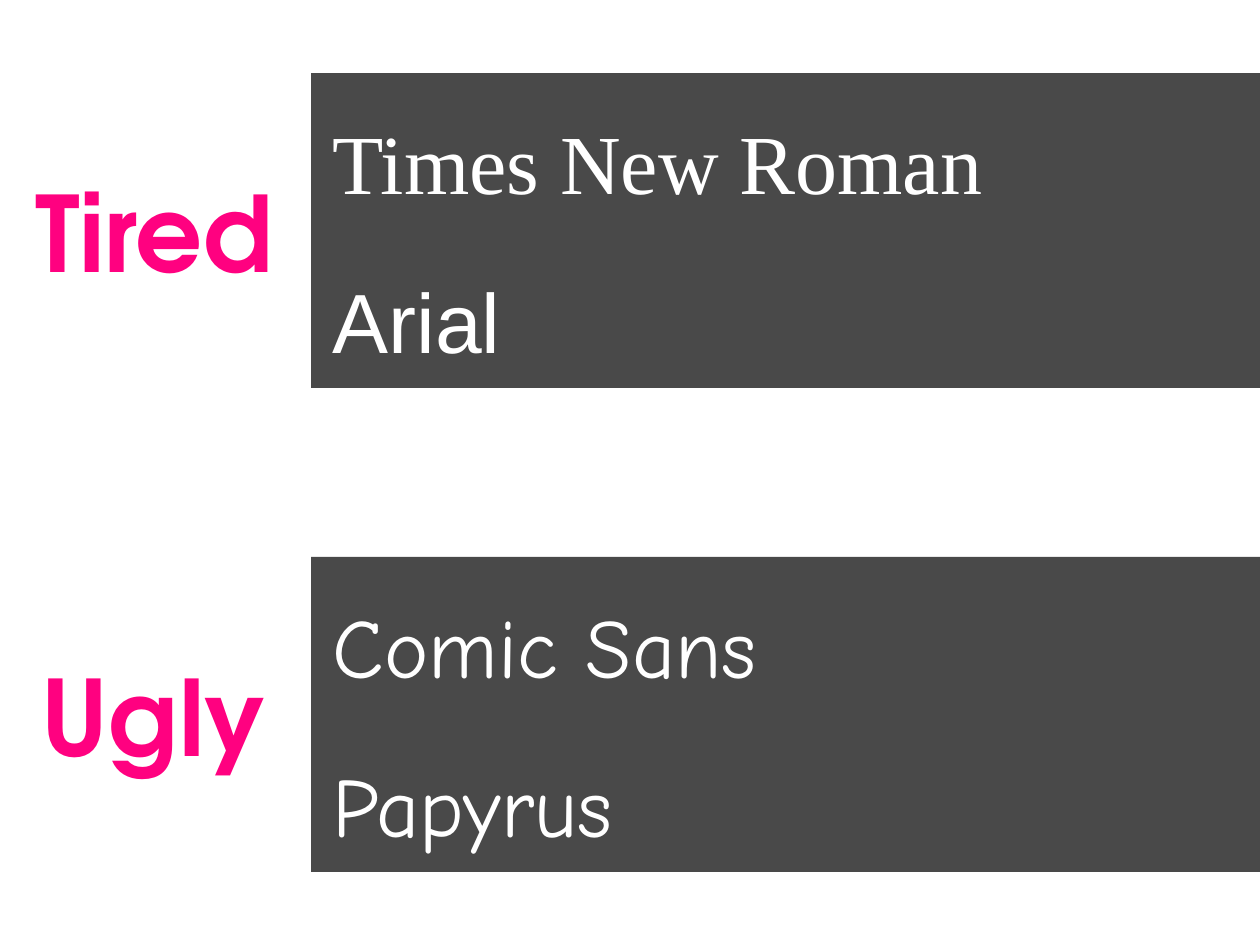
"""Build a slide listing tired and ugly typefaces in two dark bands."""

from dataclasses import dataclass

import pptx
import pptx.dml.color
import pptx.enum.shapes
import pptx.enum.text
import pptx.oxml
import pptx.util
from pptx.presentation import Presentation
from pptx.shapes.base import BaseShape
from pptx.slide import Slide

PINK = pptx.dml.color.RGBColor(0xFF, 0x01, 0x80)
CHARCOAL = pptx.dml.color.RGBColor(0x49, 0x49, 0x49)
WHITE = pptx.dml.color.RGBColor(0xFF, 0xFF, 0xFF)

SLIDE_WIDTH = 10
SLIDE_HEIGHT = 7.5
BAND_LEFT = 2.47
BAND_HEIGHT = SLIDE_HEIGHT / 3
FIRST_BAND_TOP = 0.58
BAND_PITCH = 3.84
LABEL_FONT = "TeX Gyre Adventor"
COMPARISON_LAYOUT = 4


@dataclass(frozen=True)
class Typeface:
    """A typeface name and the font that sets it."""

    name: str
    font: str


@dataclass(frozen=True)
class Category:
    """A labelled band with its typefaces and its placeholder numbers."""

    label: str
    typefaces: tuple[Typeface, ...]
    label_index: int
    list_index: int


CATEGORIES = (
    Category(
        "Tired",
        (Typeface("Times New Roman", "Times New Roman"), Typeface("Arial", "Arial")),
        1,
        2,
    ),
    Category(
        "Ugly",
        (Typeface("Comic Sans", "Comic Neue"), Typeface("Papyrus", "Comic Neue")),
        3,
        4,
    ),
)


def place(shape: BaseShape, left: float, top: float, width: float, height: float) -> None:
    """Move and size a shape, in inches."""
    shape.left, shape.top = pptx.util.Inches(left), pptx.util.Inches(top)
    shape.width, shape.height = pptx.util.Inches(width), pptx.util.Inches(height)


def format_paragraph(
    paragraph, font_name: str, size: int, color: pptx.dml.color.RGBColor, bold: bool
) -> None:
    """Remove the bullet and format the runs of a paragraph."""
    properties = paragraph._p.get_or_add_pPr()
    properties.set("marL", "0")
    properties.set("indent", "0")
    paragraph.space_before = pptx.util.Pt(0)
    bullet = '<a:buNone xmlns:a="http://schemas.openxmlformats.org/drawingml/2006/main"/>'
    properties.append(pptx.oxml.parse_xml(bullet))
    for run in paragraph.runs:
        run.font.name = font_name
        run.font.size = pptx.util.Pt(size)
        run.font.color.rgb = color
        run.font.bold = bold


def prepare_frame(shape: BaseShape, text: str):
    """Fill a placeholder with top-aligned text and return its frame."""
    frame = shape.text_frame
    frame.text = text
    frame.word_wrap = True
    frame.auto_size = pptx.enum.text.MSO_AUTO_SIZE.NONE
    frame.vertical_anchor = pptx.enum.text.MSO_ANCHOR.TOP
    return frame


def draw_band(slide: Slide, top: float) -> None:
    """Draw a dark band behind the text, reaching the right edge."""
    band = slide.shapes.add_shape(pptx.enum.shapes.MSO_SHAPE.RECTANGLE, 0, 0, 0, 0)
    place(band, BAND_LEFT, top, SLIDE_WIDTH - BAND_LEFT, BAND_HEIGHT)
    band.shadow.inherit = False
    band.fill.solid()
    band.fill.fore_color.rgb = CHARCOAL
    band.line.fill.background()
    slide.shapes._spTree.insert(2, band._element)


def draw_category(slide: Slide, category: Category, top: float) -> None:
    """Draw one band with its label and its list of typefaces."""
    draw_band(slide, top)
    placeholders = {
        shape.placeholder_format.idx: shape for shape in slide.placeholders
    }

    label = placeholders[category.label_index]
    place(label, -0.03, top + 0.7, SLIDE_WIDTH / 4, 1.11)
    paragraph = prepare_frame(label, category.label).paragraphs[0]
    format_paragraph(paragraph, LABEL_FONT, 60, PINK, True)
    paragraph.alignment = pptx.enum.text.PP_ALIGN.CENTER

    listing = placeholders[category.list_index]
    place(listing, 2.54, top + 0.19, 7.21, 2.12)
    names = "\n".join(typeface.name for typeface in category.typefaces)
    frame = prepare_frame(listing, names)
    frame.margin_top = pptx.util.Inches(0.11)
    for paragraph, typeface in zip(frame.paragraphs, category.typefaces):
        format_paragraph(paragraph, typeface.font, 48, WHITE, False)
    frame.paragraphs[-1].space_before = pptx.util.Pt(33)


def build_presentation() -> Presentation:
    """Build the one-slide presentation."""
    presentation = pptx.Presentation()
    presentation.slide_width = pptx.util.Inches(SLIDE_WIDTH)
    presentation.slide_height = pptx.util.Inches(SLIDE_HEIGHT)
    slide = presentation.slides.add_slide(presentation.slide_layouts[COMPARISON_LAYOUT])
    title = slide.shapes.title._element
    title.getparent().remove(title)
    for row, category in enumerate(CATEGORIES):
        draw_category(slide, category, FIRST_BAND_TOP + row * BAND_PITCH)
    return presentation


if __name__ == "__main__":
    build_presentation().save("out.pptx")
